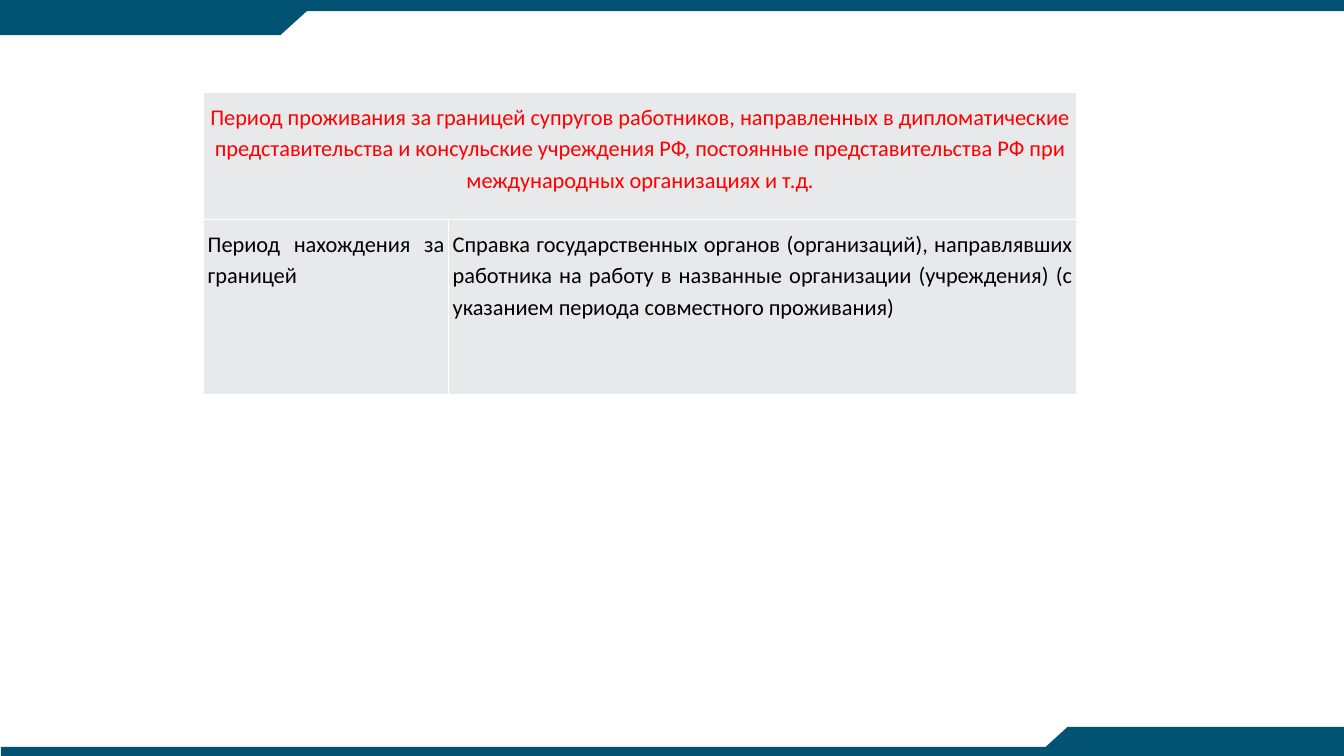
"""Build a slide with a table of periods abroad and supporting papers."""
from lxml import etree
from pptx import Presentation, util as u
from pptx.dml.color import RGBColor
from pptx.enum import shapes, text
from pptx.oxml.ns import qn

TEAL = RGBColor(0x02, 0x53, 0x73)
GREY = RGBColor(0xE7, 0xE9, 0xEB)
RED = RGBColor(0xFF, 0x00, 0x00)
BLACK = RGBColor(0x00, 0x00, 0x00)
WHITE = RGBColor(0xFF, 0xFF, 0xFF)
WIDE, HIGH = 13.33, 7.5
BAR, TAB, TIP = 0.11, 0.3, 0.66

deck = Presentation()
deck.slide_width, deck.slide_height = u.Inches(WIDE), u.Inches(HIGH)
slide = deck.slides.add_slide(deck.slide_layouts[6])

RECT = shapes.MSO_SHAPE.RECTANGLE
WEDGE = shapes.MSO_SHAPE.FLOWCHART_MERGE
trim = [
    (RECT, 0, 0, WIDE, BAR, 0),
    (RECT, 0.01, 7.41, WIDE - 0.01, HIGH - 7.41, 0),
    (RECT, 0, 0.05, 2.78, TAB, 0),
    (WEDGE, 2.45, 0.05, TIP, TAB, 0),
    (RECT, 10.59, 7.21, WIDE - 10.59, HIGH - 7.21, 0),
    (WEDGE, 10.26, 7.21, TIP, TAB, 180),
]
for kind, left, top, wide, high, turn in trim:
    part = slide.shapes.add_shape(kind, *map(u.Inches, (left, top, wide, high)))
    part.rotation = turn
    part.shadow.inherit = False
    part.fill.solid()
    part.fill.fore_color.rgb = TEAL
    part.line.fill.background()

cols, rows = (2.43, 6.23), (1.26, 1.73)
frame = slide.shapes.add_table(
    len(rows), len(cols), *map(u.Inches, (2.02, 0.92, sum(cols), sum(rows))))
table = frame.table
table.horz_banding = table.first_row = False
for col, wide in zip(table.columns, cols):
    col.width = u.Inches(wide)
for row, high in zip(table.rows, rows):
    row.height = u.Inches(high)
table.cell(0, 0).merge(table.cell(0, 1))

MID, JUST = text.PP_ALIGN.CENTER, text.PP_ALIGN.JUSTIFY
words = {
    (0, 0): ("Период проживания за границей супругов работников, направленных в "
             "дипломатические представительства и консульские учреждения РФ, "
             "постоянные представительства РФ при международных организациях и т.д.",
             RED, MID),
    (1, 0): ("Период нахождения за границей", BLACK, JUST),
    (1, 1): ("Справка государственных органов (организаций), направлявших работника "
             "на работу в названные организации (учреждения) (с указанием периода "
             "совместного проживания)", BLACK, JUST),
}
for spot, (line, color, align) in words.items():
    cell = table.cell(*spot)
    cell.margin_left = cell.margin_right = u.Inches(0.04)
    cell.margin_top = cell.margin_bottom = u.Inches(0.07)
    cell.text = line
    para = cell.text_frame.paragraphs[0]
    para.alignment, para.line_spacing = align, 1.15
    para.font.name, para.font.size = "Calibri", u.Pt(16)
    para.font.color.rgb = color

for cell in table.iter_cells():
    props = cell._tc.get_or_add_tcPr()
    for side in ("lnL", "lnR", "lnT", "lnB"):
        edge = etree.SubElement(props, qn("a:" + side), w=str(u.Pt(1)))
        fill = etree.SubElement(edge, qn("a:solidFill"))
        etree.SubElement(fill, qn("a:srgbClr"), val=str(WHITE))
    cell.fill.solid()
    cell.fill.fore_color.rgb = GREY

deck.save("out.pptx")
